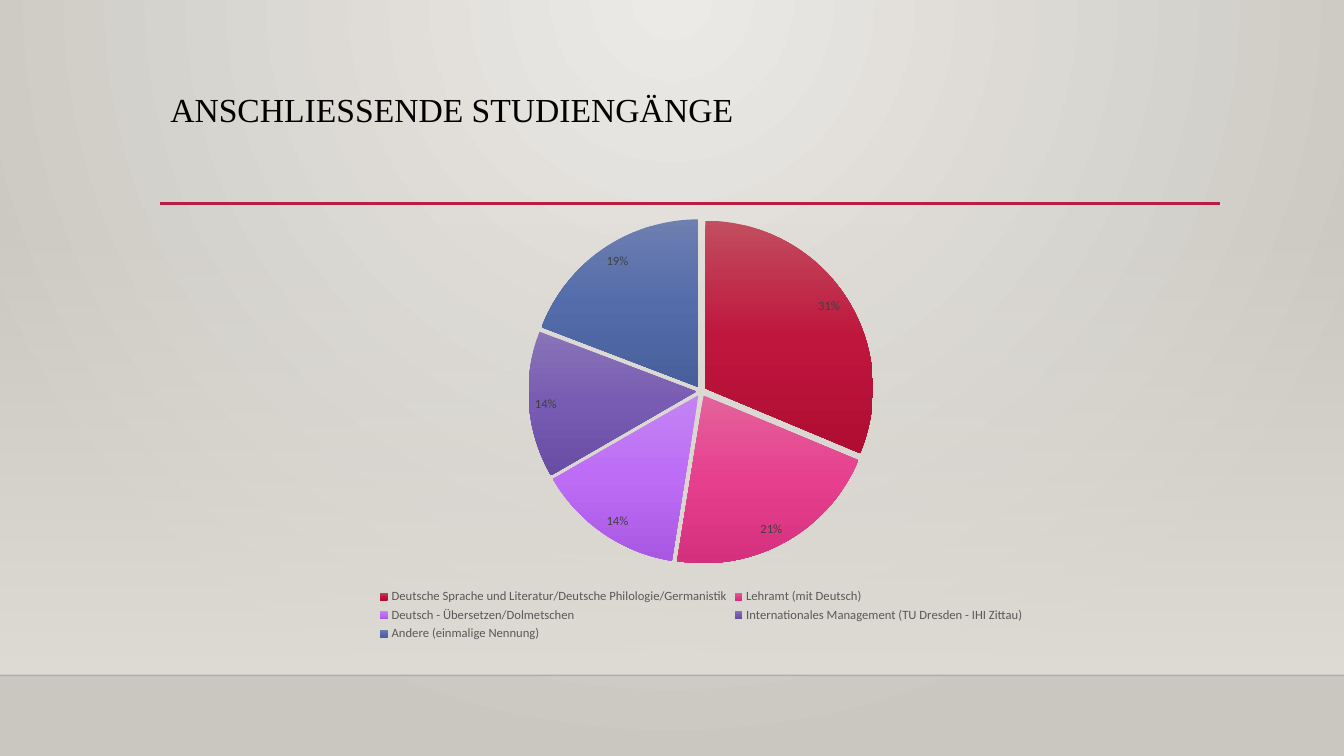
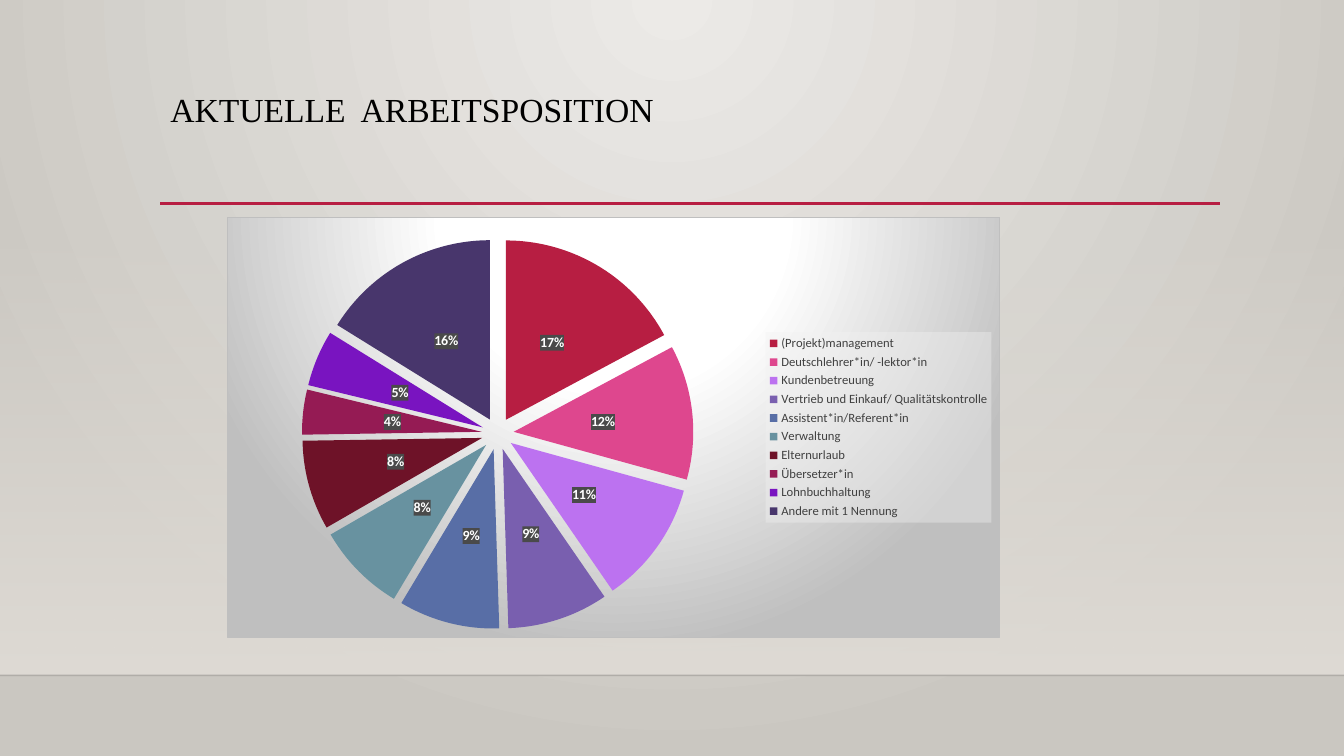
from lxml import etree
from pptx import Presentation, util as u
from pptx.chart.data import CategoryChartData
from pptx.dml.color import RGBColor
from pptx.enum import chart as ch, shapes, text
from pptx.oxml import parse_xml
from pptx.oxml.ns import nsdecls, qn

WIDTH, HEIGHT = 13.33, 7.5
LEFT, RIGHT, RULE_Y, FLOOR_Y = 1.59, 12.1, 2.02, 6.7
BLACK = RGBColor(0, 0, 0)
WHITE = RGBColor(255, 255, 255)
CRIMSON = RGBColor(0xB7, 0x1E, 0x42)
CHARCOAL = RGBColor(0x40, 0x40, 0x40)
LABEL_GREY = RGBColor(0x4A, 0x4A, 0x4A)
GREY = RGBColor(0x59, 0x59, 0x59)
SILVER = RGBColor(0xBF, 0xBF, 0xBF)
MIST = RGBColor(0xF2, 0xF2, 0xF2)
SAND = RGBColor(0xDF, 0xDB, 0xD5)
SAND_LIGHT = RGBColor(0xEC, 0xEA, 0xE7)
SAND_DARK = RGBColor(0xCA, 0xC7, 0xC1)

PIES = [
    dict(
        title="ANSCHLIESSENDE STUDIENGÄNGE",
        at=(2.9, 2.03, 8.11, 4.37),
        slices=[
            ("Deutsche Sprache und Literatur/Deutsche Philologie/Germanistik", 31, "C24E5F BF163E B00D33"),
            ("Lehramt (mit Deutsch)", 21, "E3639B E63F8E D5307D"),
            ("Deutsch - Übersetzen/Dolmetschen", 14, "C484F3 BD6CF6 A958E3"),
            ("Internationales Management (TU Dresden - IHI Zittau)", 14, "8974B8 785BB3 694CA4"),
            ("Andere (einmalige Nennung)", 19, "6E7FB0 546CAA 475F9A"),
        ],
        explosion=3,
        legend=(ch.XL_LEGEND_POSITION.BOTTOM, GREY),
        labels=(ch.XL_LABEL_POSITION.INSIDE_END, 9, CHARCOAL, False),
        panel=False,
    ),
    dict(
        title="AKTUELLE  ARBEITSPOSITION",
        at=(2.25, 2.15, 7.67, 4.18),
        slices=[
            ("(Projekt)management", 17, "B71E42"),
            ("Deutschlehrer*in/ -lektor*in", 12, "DE478E"),
            ("Kundenbetreuung", 11, "BC72F0"),
            ("Vertrieb und Einkauf/ Qualitätskontrolle", 9, "795FAF"),
            ("Assistent*in/Referent*in", 9, "586EA6"),
            ("Verwaltung", 8, "6892A0"),
            ("Elternurlaub", 8, "6E1228"),
            ("Übersetzer*in", 4, "951B54"),
            ("Lohnbuchhaltung", 5, "7914C0"),
            ("Andere mit 1 Nennung", 16, "48366C"),
        ],
        explosion=9,
        legend=(ch.XL_LEGEND_POSITION.RIGHT, CHARCOAL),
        labels=(ch.XL_LABEL_POSITION.CENTER, 10, WHITE, True),
        panel=True,
        plot=dict(x=0.02, y=0.05, w=0.66, h=0.93),
    ),
]


def inches(*lengths):
    return [u.Inches(length) for length in lengths]


def style(font, name, size, color, bold=False):
    font.name, font.size, font.bold = name, u.Pt(size), bold
    font.color.rgb = color


def set_alpha(holder, percent):
    color = next(holder.iter(qn("a:srgbClr")))
    etree.SubElement(color, qn("a:alpha"), val=str(percent * 1000))


def set_gradient(holder, stops, focus=None):
    marks = "".join(
        f'<a:gs pos="{place * 1000}"><a:srgbClr val="{color}">'
        f'<a:alpha val="{alpha * 1000}"/></a:srgbClr></a:gs>'
        for place, color, alpha in stops
    )
    if focus:
        edges = " ".join(f'{side}="{share * 1000}"' for side, share in zip("ltrb", focus))
        course = f'<a:path path="circle"><a:fillToRect {edges}/></a:path>'
    else:
        course = '<a:lin ang="5400000" scaled="0"/>'
    solid = next(holder.iter(qn("a:solidFill")))
    solid.getparent().replace(solid, parse_xml(
        f'<a:gradFill {nsdecls("a")} rotWithShape="1"><a:gsLst>{marks}</a:gsLst>{course}</a:gradFill>'))


def add_backing(holder, color, border=""):
    backing = parse_xml(
        f'<c:spPr {nsdecls("c", "a")}><a:solidFill><a:srgbClr val="{color}"/></a:solidFill>{border}</c:spPr>')
    holder.find(qn("c:txPr")).addprevious(backing)
    return backing


def add_line(page, x1, x2, y, color, width):
    line = page.shapes.add_connector(shapes.MSO_CONNECTOR.STRAIGHT, *inches(x1, y, x2, y))
    line.line.color.rgb, line.line.width = color, u.Pt(width)
    etree.SubElement(line._element.spPr, qn("a:effectLst"))
    return line


def add_page(deck, title):
    page = deck.slides.add_slide(deck.slide_layouts[6])
    page.background.fill.solid()
    page.background.fill.fore_color.rgb = SAND_LIGHT
    set_gradient(page.element, [(0, SAND_LIGHT, 100), (100, SAND_DARK, 100)], (43, 0, 43, 100))

    wall = page.shapes.add_shape(shapes.MSO_SHAPE.RECTANGLE, *inches(0, 2.21, WIDTH, FLOOR_Y - 2.21))
    wall.shadow.inherit = False
    wall.line.fill.background()
    wall.fill.solid()
    wall.fill.fore_color.rgb = SAND
    set_gradient(wall._element.spPr, [(0, SAND, 0), (100, SAND, 100)])

    floor = add_line(page, 0, WIDTH, FLOOR_Y, BLACK, 1)
    set_alpha(floor._element.spPr, 20)
    add_line(page, LEFT, RIGHT, RULE_Y, CRIMSON, 2.5)

    box = page.shapes.add_textbox(*inches(LEFT, 0.88, RIGHT - LEFT, 0.65))
    box.text_frame.word_wrap = True
    box.text_frame.vertical_anchor = text.MSO_ANCHOR.TOP
    para = box.text_frame.paragraphs[0]
    para.text, para.line_spacing = title, 0.9
    style(para.runs[0].font, "Times New Roman", 24, BLACK)
    return page


def color_slices(series, slices):
    for index, (_, _, colors) in enumerate(slices):
        fill = series.points[index].format.fill
        fill.solid()
        fill.fore_color.rgb = RGBColor.from_string(colors.split()[0])
    for point, (_, _, colors) in zip(series._element.findall(qn("c:dPt")), slices):
        shades = colors.split()
        if len(shades) > 1:
            set_gradient(point, [(50 * step, shade, 100) for step, shade in enumerate(shades)])


def place_plot(chart, plot):
    area = next(chart._chartSpace.iter(qn("c:plotArea")))
    for old in area.findall(qn("c:layout")):
        area.remove(old)
    sides = "".join(f'<c:{side} val="{share}"/>' for side, share in plot.items())
    area.insert(0, parse_xml(
        f'<c:layout {nsdecls("c")}><c:manualLayout><c:layoutTarget val="inner"/>'
        f'<c:xMode val="edge"/><c:yMode val="edge"/>{sides}</c:manualLayout></c:layout>'))


def add_panel(chart, labels):
    border = f'<a:ln w="9525"><a:solidFill><a:srgbClr val="{SILVER}"/></a:solidFill></a:ln>'
    panel = add_backing(chart._chartSpace, WHITE, border)
    set_gradient(panel, [(0, WHITE, 100), (39, WHITE, 100), (100, SILVER, 100)], (50, -80, 50, 180))
    set_alpha(add_backing(chart.legend._element, MIST), 39)
    add_backing(labels._element, LABEL_GREY)


def add_pie(page, pie):
    data = CategoryChartData()
    data.categories = [name for name, _, _ in pie["slices"]]
    data.add_series("Series 1", [value for _, value, _ in pie["slices"]])
    chart = page.shapes.add_chart(ch.XL_CHART_TYPE.PIE, *inches(*pie["at"]), data).chart
    chart.has_title = False
    style(chart.font, "Calibri", 10, BLACK)

    chart.has_legend = True
    position, color = pie["legend"]
    chart.legend.position = position
    chart.legend.include_in_layout = False
    style(chart.legend.font, "Calibri", 9, color)

    plot = chart.plots[0]
    plot.vary_by_categories = True
    series = plot.series[0]
    color_slices(series, pie["slices"])
    explosion = etree.Element(qn("c:explosion"), val=str(pie["explosion"]))
    series._element.find(qn("c:dPt")).addprevious(explosion)

    position, size, color, bold = pie["labels"]
    labels = series.data_labels
    labels.show_percentage, labels.show_value = True, False
    labels.number_format, labels.number_format_is_linked = "0%", False
    style(labels.font, "Calibri", size, color, bold)
    labels.position = position

    if pie["panel"]:
        add_panel(chart, labels)
        place_plot(chart, pie["plot"])


def main():
    deck = Presentation()
    deck.slide_width, deck.slide_height = inches(WIDTH, HEIGHT)
    for pie in PIES:
        add_pie(add_page(deck, pie["title"]), pie)
    deck.save("out.pptx")


if __name__ == "__main__":
    main()
